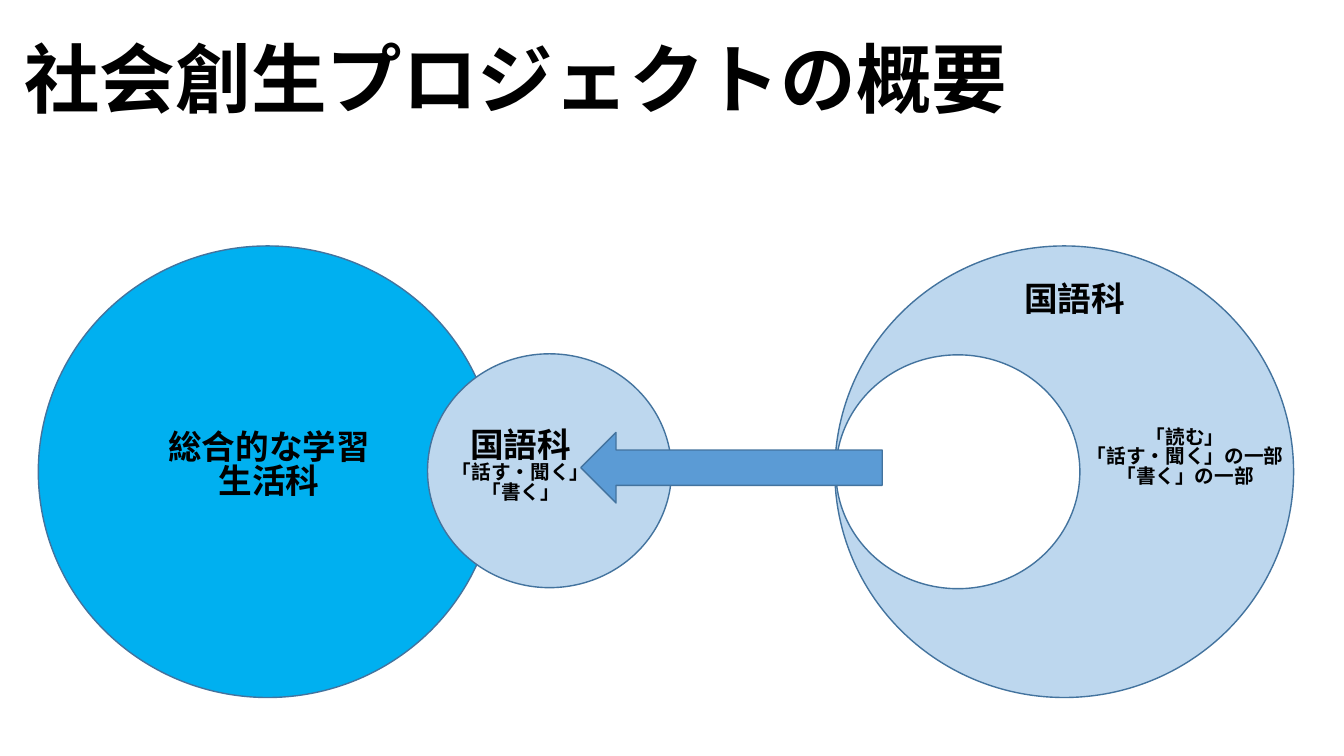
from lxml.etree import SubElement
from pptx import Presentation
from pptx.dml.color import RGBColor
from pptx.enum.shapes import MSO_SHAPE as Preset
from pptx.enum.text import MSO_ANCHOR as Anchor, MSO_AUTO_SIZE as AutoSize, PP_ALIGN as Align
from pptx.oxml.ns import qn
from pptx.util import Inches, Pt

BLACK = RGBColor(0x00, 0x00, 0x00)
WHITE = RGBColor(0xFF, 0xFF, 0xFF)
SKY = RGBColor(0x00, 0xB0, 0xF0)
PALE_BLUE = RGBColor(0xBD, 0xD7, 0xEE)
ARROW_BLUE = RGBColor(0x5B, 0x9B, 0xD5)
OUTLINE = RGBColor(0x43, 0x73, 0x9E)

SUBJECT_SIZE = (4.55, 4.48)
PART_SIZE = (2.42, 2.32)
SUBJECT_TOP = 2.44


class DiagramSlide:
    font_name = "Noto Sans CJK JP"
    line_spacing = 0.84

    def __init__(self, presentation):
        self.slide = presentation.slides.add_slide(presentation.slide_layouts[5])

    def fill_text(self, frame, lines, align):
        """Fill a text frame with (text, point size) lines."""
        frame_format = {"word_wrap": True, "auto_size": AutoSize.NONE,
                        "vertical_anchor": Anchor.TOP}
        for name, value in frame_format.items():
            setattr(frame, name, value)
        for index, (text, size) in enumerate(lines):
            paragraph = frame.add_paragraph() if index else frame.paragraphs[0]
            paragraph.alignment = align
            paragraph.line_spacing = self.line_spacing
            run = paragraph.add_run()
            run.text = text
            font_format = {"name": self.font_name, "size": Pt(size), "bold": True}
            for name, value in font_format.items():
                setattr(run.font, name, value)
            run.font.color.rgb = BLACK
            east_asian = SubElement(run.font._element, qn("a:ea"))
            east_asian.set("typeface", self.font_name)

    def title(self, text, left, top, width, height):
        heading = self.slide.shapes.title
        place = {"left": left, "top": top, "width": width, "height": height}
        for name, value in place.items():
            setattr(heading, name, Inches(value))
        self.fill_text(heading.text_frame, [(text, 54)], Align.LEFT)

    def label(self, lines, left, top, width, height):
        box = self.slide.shapes.add_textbox(*map(Inches, (left, top, width, height)))
        self.fill_text(box.text_frame, lines, Align.CENTER)

    def shape(self, preset, fill, left, top, width, height):
        figure = self.slide.shapes.add_shape(preset, *map(Inches, (left, top, width, height)))
        figure.shadow.inherit = False
        figure.fill.solid()
        figure.fill.fore_color.rgb = fill
        figure.line.color.rgb = OUTLINE
        figure.line.width = Pt(1)

    def circle(self, fill, left, top, size):
        self.shape(Preset.OVAL, fill, left, top, *size)


def main():
    presentation = Presentation()
    presentation.slide_width = Inches(13.33)
    presentation.slide_height = Inches(7.5)
    overview = DiagramSlide(presentation)

    overview.title("社会創生プロジェクトの概要", 0.14, 0.41, 13.06, 1.01)

    overview.circle(SKY, 0.38, SUBJECT_TOP, SUBJECT_SIZE)
    overview.circle(PALE_BLUE, 4.24, 3.51, PART_SIZE)
    overview.label([("総合的な学習", 24), ("生活科", 24)], 0.92, 4.24, 3.5, 0.91)
    overview.label([("国語科", 24), ("「話す・聞く」「書く」", 14)], 4.21, 4.22, 1.91, 0.98)

    overview.circle(PALE_BLUE, 8.28, SUBJECT_TOP, SUBJECT_SIZE)
    overview.circle(WHITE, 8.29, 3.52, PART_SIZE)
    overview.label([("国語科", 24)], 8.91, 2.77, 3.5, 0.5)
    remaining = ["「読む」", "「話す・聞く」の一部", "「書く」の一部"]
    overview.label([(skill, 14) for skill in remaining], 10.56, 4.2, 2.39, 0.81)

    overview.shape(Preset.LEFT_ARROW, ARROW_BLUE, 5.76, 4.29, 2.99, 0.7)
    presentation.save("out.pptx")


if __name__ == "__main__":
    main()
